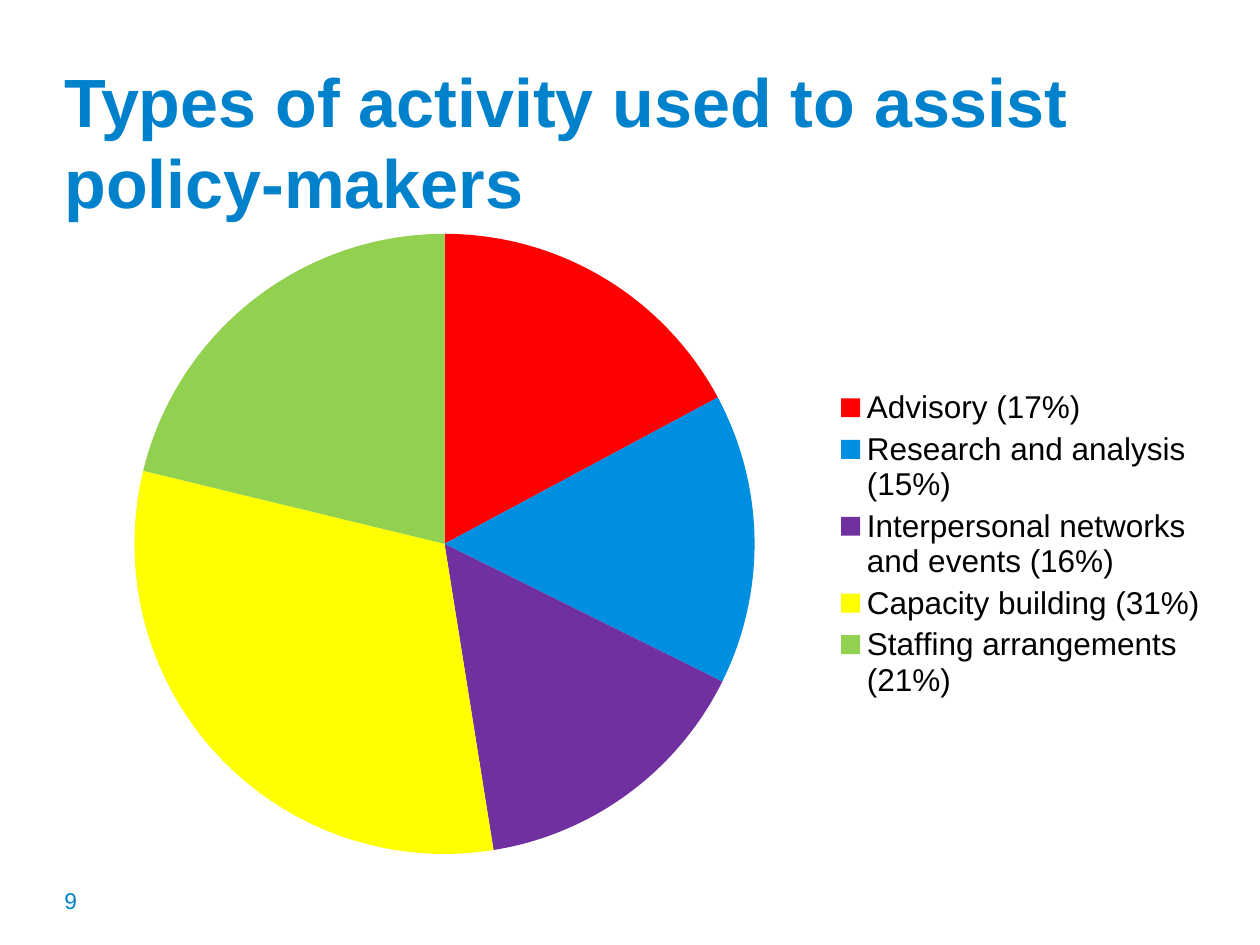
import lxml.etree
import pptx
import pptx.chart.data
import pptx.dml.color
import pptx.enum.chart
import pptx.enum.text
import pptx.oxml.ns
import pptx.util
from pptx.util import Cm

RGB = pptx.dml.color.RGBColor
BLUE = RGB(0x00, 0x81, 0xCB)
BLACK = RGB(0x00, 0x00, 0x00)
FONT = "Arial"
SLICES = [
    ("Advisory (17%)", 17, RGB(0xFF, 0x00, 0x00)),
    ("Research and analysis (15%)", 15, RGB(0x00, 0x8F, 0xE0)),
    ("Interpersonal networks and events (16%)", 15, RGB(0x70, 0x30, 0xA0)),
    ("Capacity building (31%)", 31, RGB(0xFF, 0xFF, 0x00)),
    ("Staffing arrangements (21%)", 21, RGB(0x92, 0xD0, 0x50)),
]


def set_font(font, size, color, bold=False):
    font.name = FONT
    font.size = pptx.util.Pt(size)
    font.bold = bold
    font.color.rgb = color


def add_text(slide, box, text, size, color=BLUE, bold=False, pitch=None, inset=0):
    """Place text in a box; pitch is the line height in points."""
    frame = slide.shapes.add_textbox(*box).text_frame
    frame.word_wrap = True
    frame.vertical_anchor = pptx.enum.text.MSO_ANCHOR.TOP
    frame.margin_left = frame.margin_right = frame.margin_bottom = 0
    frame.margin_top = inset
    para = frame.paragraphs[0]
    if pitch:
        para.line_spacing = pptx.util.Pt(pitch)
    run = para.add_run()
    run.text = text
    set_font(run.font, size, color, bold)


def set_place(part, x, y, w, h, inner=False):
    """Fix a chart part at fractions of the chart area."""
    tag = pptx.oxml.ns.qn
    layout = part.find(tag("c:layout"))
    if layout is None:
        layout = lxml.etree.Element(tag("c:layout"))
        if inner:
            part.insert(0, layout)
        else:
            part.find(tag("c:legendPos")).addnext(layout)
    manual = lxml.etree.SubElement(layout, tag("c:manualLayout"))
    values = [("xMode", "edge"), ("yMode", "edge"),
              ("x", x), ("y", y), ("w", w), ("h", h)]
    if inner:
        values.insert(0, ("layoutTarget", "inner"))
    for name, value in values:
        lxml.etree.SubElement(manual, tag("c:" + name)).set("val", str(value))


def add_pie(slide, box):
    data = pptx.chart.data.CategoryChartData()
    data.categories = [name for name, _, _ in SLICES]
    data.add_series("Series 1", [value for _, value, _ in SLICES])
    chart = slide.shapes.add_chart(
        pptx.enum.chart.XL_CHART_TYPE.PIE, *box, data).chart
    chart.has_title = False
    set_font(chart.font, 18, BLACK)

    plot = chart.plots[0]
    plot.vary_by_categories = True
    for i, (_, _, color) in enumerate(SLICES):
        form = plot.series[0].points[i].format
        form.fill.solid()
        form.fill.fore_color.rgb = color
        form.line.fill.background()

    chart.has_legend = True
    legend = chart.legend
    legend.position = pptx.enum.chart.XL_LEGEND_POSITION.RIGHT
    legend.include_in_layout = False
    set_font(legend.font, 18, BLACK)

    area = chart._chartSpace.chart.plotArea
    set_place(area, 0.06, 0.03, 0.54, 0.95, inner=True)
    set_place(legend._element, 0.67, 0.26, 0.32, 0.49)


def main():
    deck = pptx.Presentation()
    deck.slide_width, deck.slide_height = Cm(25.4), Cm(19.05)
    slide = deck.slides.add_slide(deck.slide_layouts[6])
    left, width = Cm(1.3), Cm(23.22)
    add_text(slide, (left, Cm(1.12), width, Cm(2.57)),
             "Types of activity used to assist policy-makers",
             39, bold=True, pitch=46.5, inset=Cm(0.08))
    add_pie(slide, (left, Cm(4.32), width, Cm(13.16)))
    add_text(slide, (left, Cm(17.88), Cm(0.81), Cm(0.81)), "9", 13)
    deck.save("out.pptx")


if __name__ == "__main__":
    main()
